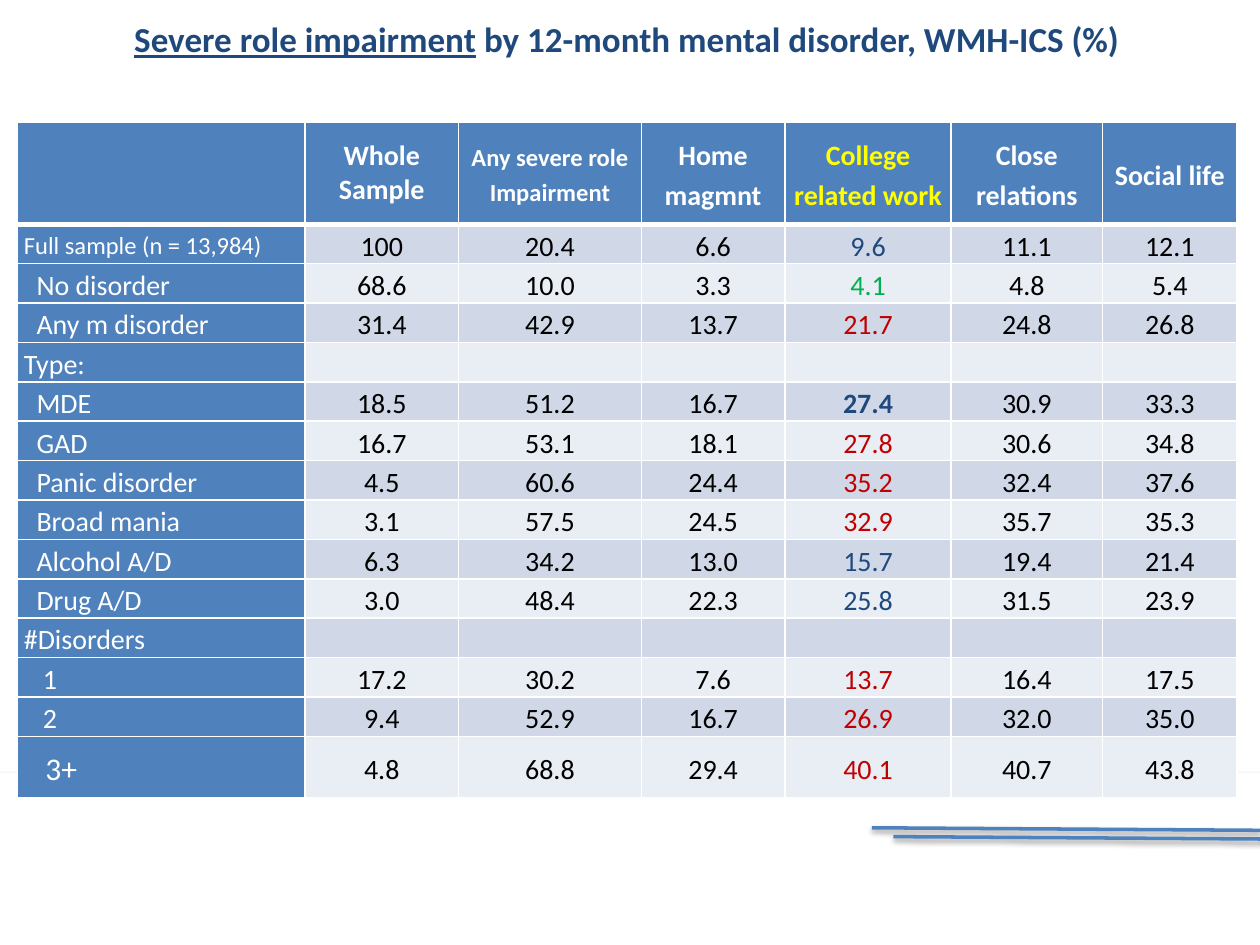
"""Build the slide on severe role impairment by 12-month mental disorder."""
from lxml import etree
from pptx import Presentation
from pptx.dml.color import RGBColor
from pptx.enum.shapes import MSO_CONNECTOR, MSO_SHAPE
from pptx.enum.text import MSO_ANCHOR, PP_ALIGN
from pptx.oxml.ns import qn
from pptx.util import Inches, Pt

STRAIGHT = MSO_CONNECTOR.STRAIGHT
RECTANGLE = MSO_SHAPE.RECTANGLE
TOP, MIDDLE = MSO_ANCHOR.TOP, MSO_ANCHOR.MIDDLE
LEFT, CENTER = PP_ALIGN.LEFT, PP_ALIGN.CENTER

WHITE = RGBColor(0xFF, 0xFF, 0xFF)
BLACK = RGBColor(0, 0, 0)
BLUE = RGBColor(0x4F, 0x81, 0xBD)
NAVY = RGBColor(0x1F, 0x49, 0x7D)
RED = RGBColor(0xC0, 0, 0)
GREEN = RGBColor(0, 0xB0, 0x50)
YELLOW = RGBColor(0xFF, 0xFF, 0)
BANDS = (RGBColor(0xE9, 0xED, 0xF4), RGBColor(0xD0, 0xD8, 0xE8))
FONT = "Calibri"

TITLE = [("Severe role impairment", True),
         (" by 12-month mental disorder, WMH-ICS (%)", False)]
HEADERS = ["", "Whole Sample", "Any severe role Impairment", "Home magmnt",
           "College related work", "Close relations", "Social life"]
ROWS = [
    ("Full sample (n = 13,984)", 0, NAVY, "100 20.4 6.6 9.6 11.1 12.1"),
    ("No disorder", 0.1, GREEN, "68.6 10.0 3.3 4.1 4.8 5.4"),
    ("Any m disorder", 0.1, RED, "31.4 42.9 13.7 21.7 24.8 26.8"),
    ("Type:", 0, BLACK, ""),
    ("MDE", 0.1, NAVY, "18.5 51.2 16.7 27.4 30.9 33.3"),
    ("GAD", 0.1, RED, "16.7 53.1 18.1 27.8 30.6 34.8"),
    ("Panic disorder", 0.1, RED, "4.5 60.6 24.4 35.2 32.4 37.6"),
    ("Broad mania", 0.1, RED, "3.1 57.5 24.5 32.9 35.7 35.3"),
    ("Alcohol A/D", 0.1, NAVY, "6.3 34.2 13.0 15.7 19.4 21.4"),
    ("Drug A/D", 0.1, NAVY, "3.0 48.4 22.3 25.8 31.5 23.9"),
    ("#Disorders", 0, BLACK, ""),
    ("1", 0.15, RED, "17.2 30.2 7.6 13.7 16.4 17.5"),
    ("2", 0.15, RED, "9.4 52.9 16.7 26.9 32.0 35.0"),
    ("3+", 0.17, RED, "4.8 68.8 29.4 40.1 40.7 43.8"),
]
LABEL_SIZES = {"Full sample (n = 13,984)": 14, "3+": 18}
COLLEGE = 4
BOLD_ROW = "MDE"
COLUMN_WIDTHS = [2.28, 1.22, 1.45, 1.14, 1.32, 1.2, 1.07]
ROW_HEIGHTS = [0.81] + [0.3] * (len(ROWS) - 1) + [0.49]
RULES = [(6.92, 6.57, 10, 6.59), (7.09, 6.64, 10.17, 6.66)]


def add_shadow(shape, opacity, distance):
    effects = etree.SubElement(shape._element.spPr, qn("a:effectLst"))
    shadow = etree.SubElement(effects, qn("a:outerShdw"), blurRad=str(Pt(3.1)),
                              dist=str(Pt(distance)), dir="5400000", rotWithShape="0")
    color = etree.SubElement(shadow, qn("a:srgbClr"), val="000000")
    etree.SubElement(color, qn("a:alpha"), val=str(opacity * 1000))


def add_span(para, text, size, color, bold=False):
    span = para.add_run()
    span.text = text
    font = span.font
    font.name, font.size, font.bold = FONT, Pt(size), bold
    font.color.rgb = color
    return span


def style_cell(cell, fill, top=1, bottom=1, indent=0):
    properties = cell._tc.get_or_add_tcPr()
    for side, width in (("L", 1), ("R", 1), ("T", top), ("B", bottom)):
        line = etree.SubElement(properties, qn("a:ln" + side), w=str(Pt(width)))
        solid = etree.SubElement(line, qn("a:solidFill"))
        etree.SubElement(solid, qn("a:srgbClr"), val=str(WHITE))
    cell.fill.solid()
    cell.fill.fore_color.rgb = fill
    cell.margin_left, cell.margin_right = Inches(0.05 + indent), Inches(0.05)
    cell.margin_top = cell.margin_bottom = 0
    cell.vertical_anchor = MIDDLE


def write_cell(cell, text, size, color, bold=False, align=CENTER, spacing=1.15):
    para = cell.text_frame.paragraphs[0]
    para.alignment, para.line_spacing = align, spacing
    add_span(para, text, size, color, bold)


def add_decoration(page):
    band = page.shapes.add_shape(RECTANGLE, 0, Inches(6.14), Inches(10), Inches(1.36))
    band.fill.solid()
    band.fill.fore_color.rgb = band.line.color.rgb = WHITE
    band.line.width = Pt(0.75)
    add_shadow(band, 35, 1.8)
    for ends in RULES:
        rule = page.shapes.add_connector(STRAIGHT, *map(Inches, ends))
        rule.line.color.rgb = BLUE
        rule.line.width = Pt(2)
        add_shadow(rule, 38, 1.6)


def add_impairment_table(page):
    frame = page.shapes.add_table(len(ROW_HEIGHTS), len(COLUMN_WIDTHS),
                                  Inches(0.14), Inches(0.97),
                                  Inches(sum(COLUMN_WIDTHS)), Inches(sum(ROW_HEIGHTS)))
    table = frame.table
    for column, width in zip(table.columns, COLUMN_WIDTHS):
        column.width = Inches(width)
    for row, height in zip(table.rows, ROW_HEIGHTS):
        row.height = Inches(height)

    for index, header in enumerate(HEADERS):
        cell = table.cell(0, index)
        style_cell(cell, BLUE, bottom=3)
        if header:
            write_cell(cell, header, 14 if index == 2 else 16,
                       YELLOW if index == COLLEGE else WHITE, True,
                       spacing=1 if index == 1 else 1.15)

    for number, (label, indent, college_color, figures) in enumerate(ROWS, 1):
        top = 3 if number == 1 else 1
        head = table.cell(number, 0)
        style_cell(head, BLUE, top, indent=indent)
        write_cell(head, label, LABEL_SIZES.get(label, 16), WHITE, align=LEFT)
        for index in range(1, len(HEADERS)):
            style_cell(table.cell(number, index), BANDS[number % 2], top)
        for index, figure in enumerate(figures.split(), 1):
            college = index == COLLEGE
            write_cell(table.cell(number, index), figure, 16,
                       college_color if college else BLACK,
                       college and label == BOLD_ROW)


def format_title(title):
    title.left, title.top = Inches(0.43), Inches(0.09)
    title.width, title.height = Inches(9.09), Inches(0.74)
    box = title.text_frame
    box.word_wrap, box.vertical_anchor = True, TOP
    para = box.paragraphs[0]
    para.alignment = CENTER
    for text, underlined in TITLE:
        add_span(para, text, 20, NAVY, True).font.underline = underlined


def main():
    deck = Presentation()
    deck.slide_width, deck.slide_height = Inches(10), Inches(7.5)
    page = deck.slides.add_slide(deck.slide_layouts[5])
    add_decoration(page)
    add_impairment_table(page)
    format_title(page.shapes.title)
    deck.save("out.pptx")


if __name__ == "__main__":
    main()
